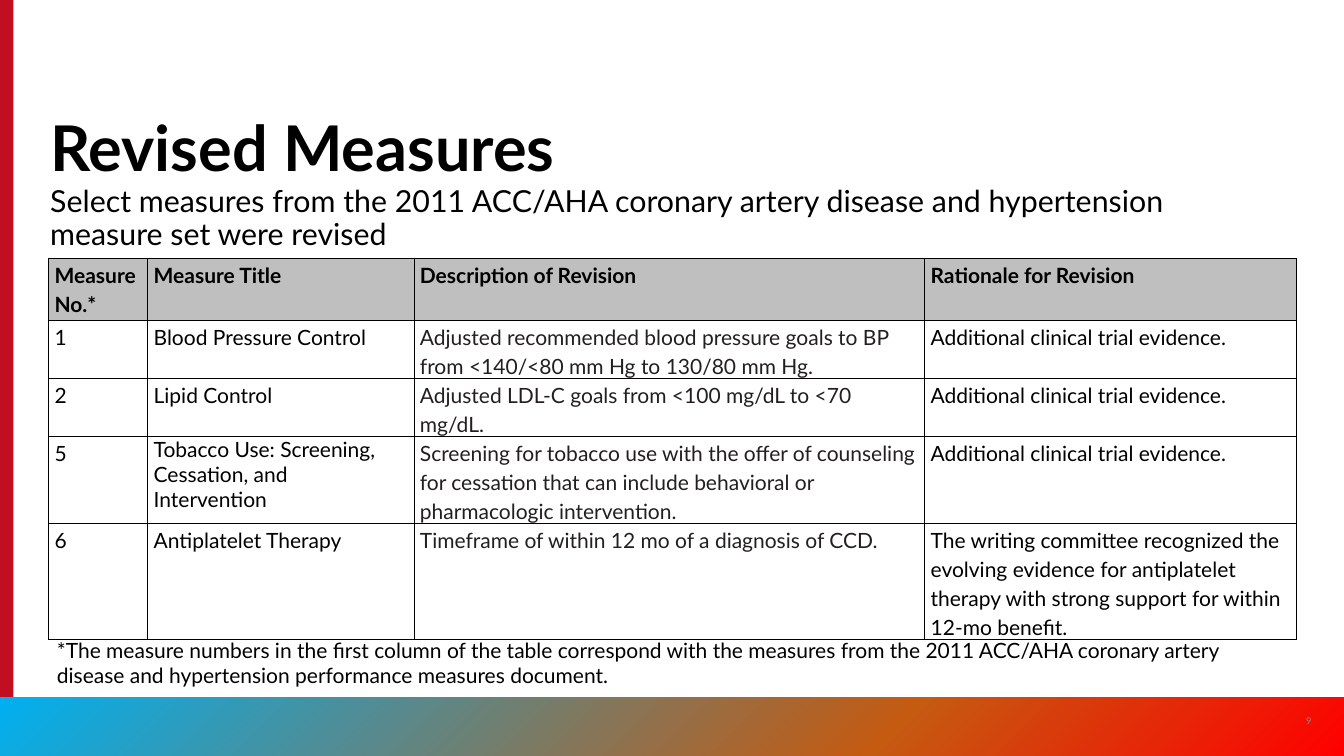
from copy import deepcopy
from lxml import etree
from pptx import Presentation
from pptx.dml.color import RGBColor
from pptx.enum import shapes, text
from pptx.oxml import ns
from pptx.util import Inches, Pt

TITLE = "Revised Measures"
LEAD = ("Select measures from the 2011 ACC/AHA coronary artery disease "
        "and hypertension measure set were revised")
NOTE = ("*The measure numbers in the first column of the table correspond with "
        "the measures from the 2011 ACC/AHA coronary artery disease and "
        "hypertension performance measures document.")
TRIAL = "Additional clinical trial evidence."
ROWS = [
    ("Measure\nNo.*", "Measure Title", "Description of Revision",
     "Rationale for Revision"),
    ("1", "Blood Pressure Control",
     "Adjusted recommended blood pressure goals to BP from <140/<80 mm Hg "
     "to 130/80 mm Hg.", TRIAL),
    ("2", "Lipid Control",
     "Adjusted LDL-C goals from <100 mg/dL to <70 mg/dL.", TRIAL),
    ("5", "Tobacco Use: Screening,\nCessation, and\nIntervention",
     "Screening for tobacco use with the offer of counseling for cessation "
     "that can include behavioral or pharmacologic intervention.", TRIAL),
    ("6", "Antiplatelet Therapy",
     "Timeframe of within 12 mo of a diagnosis of CCD.",
     "The writing committee recognized the evolving evidence for antiplatelet "
     "therapy with strong support for within 12-mo benefit."),
]
WIDTHS = (1.18, 3.17, 6.08, 4.42)
HEIGHTS = (0.74, 0.68, 0.67, 0.83, 0.83)

FONT = "Lato"
BLACK = RGBColor(0x00, 0x00, 0x00)
INK = RGBColor(0x23, 0x1F, 0x20)
GRAY = RGBColor(0x8A, 0x8B, 0x8A)
HEAD = RGBColor(0xBF, 0xBF, 0xBF)
RED = RGBColor(0xC1, 0x0E, 0x21)
STOPS = ((0, RGBColor(0x00, 0xB0, 0xF0)), (66, RGBColor(0xC5, 0x5A, 0x11)),
         (100, RGBColor(0xFF, 0x00, 0x00)))


def style(frame, size, color=BLACK, bold=False, line=None, after=None):
    """Format every paragraph and run of a text frame."""
    for para in frame.paragraphs:
        para.line_spacing = line
        para.space_after = after
        for run in para.runs:
            font = run.font
            font.name, font.size, font.bold = FONT, Pt(size), bold
            font.color.rgb = color


def label(slide, words, box, size, **look):
    """Add a wrapping text box."""
    shape = slide.shapes.add_textbox(*map(Inches, box))
    frame = shape.text_frame
    frame.word_wrap = True
    frame.text = words
    style(frame, size, **look)
    return frame


def bar(slide, box):
    """Add a plain rectangle without outline."""
    shape = slide.shapes.add_shape(shapes.MSO_SHAPE.RECTANGLE, *map(Inches, box))
    shape.shadow.inherit = False
    shape.line.fill.background()
    return shape.fill


def blend(fill):
    """Give a fill the diagonal three-colour gradient."""
    fill.gradient()
    fill.gradient_angle = 315
    first = fill.gradient_stops[0]._gs
    first.addnext(deepcopy(first))
    for stop, (place, color) in zip(fill.gradient_stops, STOPS):
        stop.position = place / 100
        stop.color.rgb = color


def border(cell):
    """Draw thin black lines around a cell."""
    props = cell._tc.get_or_add_tcPr()
    for side in "LRTB":
        line = etree.SubElement(props, ns.qn("a:ln" + side), w=str(Pt(1)))
        solid = etree.SubElement(line, ns.qn("a:solidFill"))
        etree.SubElement(solid, ns.qn("a:srgbClr"), val=str(BLACK))


def grid(slide):
    """Add the table of revised measures."""
    frame = slide.shapes.add_table(len(ROWS), len(WIDTHS), Inches(0.58),
                                   Inches(3.08), Inches(sum(WIDTHS)),
                                   Inches(sum(HEIGHTS)))
    table = frame.table
    table.first_row = table.horz_banding = False
    for col, width in zip(table.columns, WIDTHS):
        col.width = Inches(width)
    for r, (row, height) in enumerate(zip(ROWS, HEIGHTS)):
        table.rows[r].height = Inches(height)
        for c, words in enumerate(row):
            cell = table.cell(r, c)
            cell.margin_left = cell.margin_right = Inches(0.07)
            cell.margin_top = cell.margin_bottom = 0
            cell.text = words
            border(cell)
            top, split = r == 0, "\n" in words
            if top:
                cell.fill.solid()
                cell.fill.fore_color.rgb = HEAD
            else:
                cell.fill.background()
            style(cell.text_frame, 18, INK if c == 2 and not top else BLACK, top,
                  1.15 if top or not split else None,
                  None if top or split else Pt(10))


def main():
    """Build the slide and save it."""
    deck = Presentation()
    deck.slide_width, deck.slide_height = Inches(16), Inches(9)
    slide = deck.slides.add_slide(deck.slide_layouts[5])

    side = bar(slide, (0, 0, 0.16, 9))
    side.solid()
    side.fore_color.rgb = RED
    blend(bar(slide, (0, 8.3, 16, 0.7)))

    title = slide.shapes.title
    title.left, title.top = Inches(0.5), Inches(1.25)
    title.width, title.height = Inches(14.08), Inches(1)
    frame = title.text_frame
    frame.text = TITLE
    frame.auto_size = text.MSO_AUTO_SIZE.NONE
    frame.vertical_anchor = text.MSO_ANCHOR.BOTTOM
    frame.paragraphs[0].alignment = text.PP_ALIGN.LEFT
    style(frame, 54, bold=True, line=0.9)

    page = label(slide, "9", (15.34, 8.34, 0.48, 0.48), 8, color=GRAY)
    page.vertical_anchor = text.MSO_ANCHOR.MIDDLE
    page.paragraphs[0].alignment = text.PP_ALIGN.CENTER
    grid(slide)
    label(slide, LEAD, (0.5, 2.17, 14.84, 0.85), 26, line=0.9)
    label(slide, NOTE, (0.58, 7.54, 14.83, 0.71), 18)
    deck.save("out.pptx")


if __name__ == "__main__":
    main()
